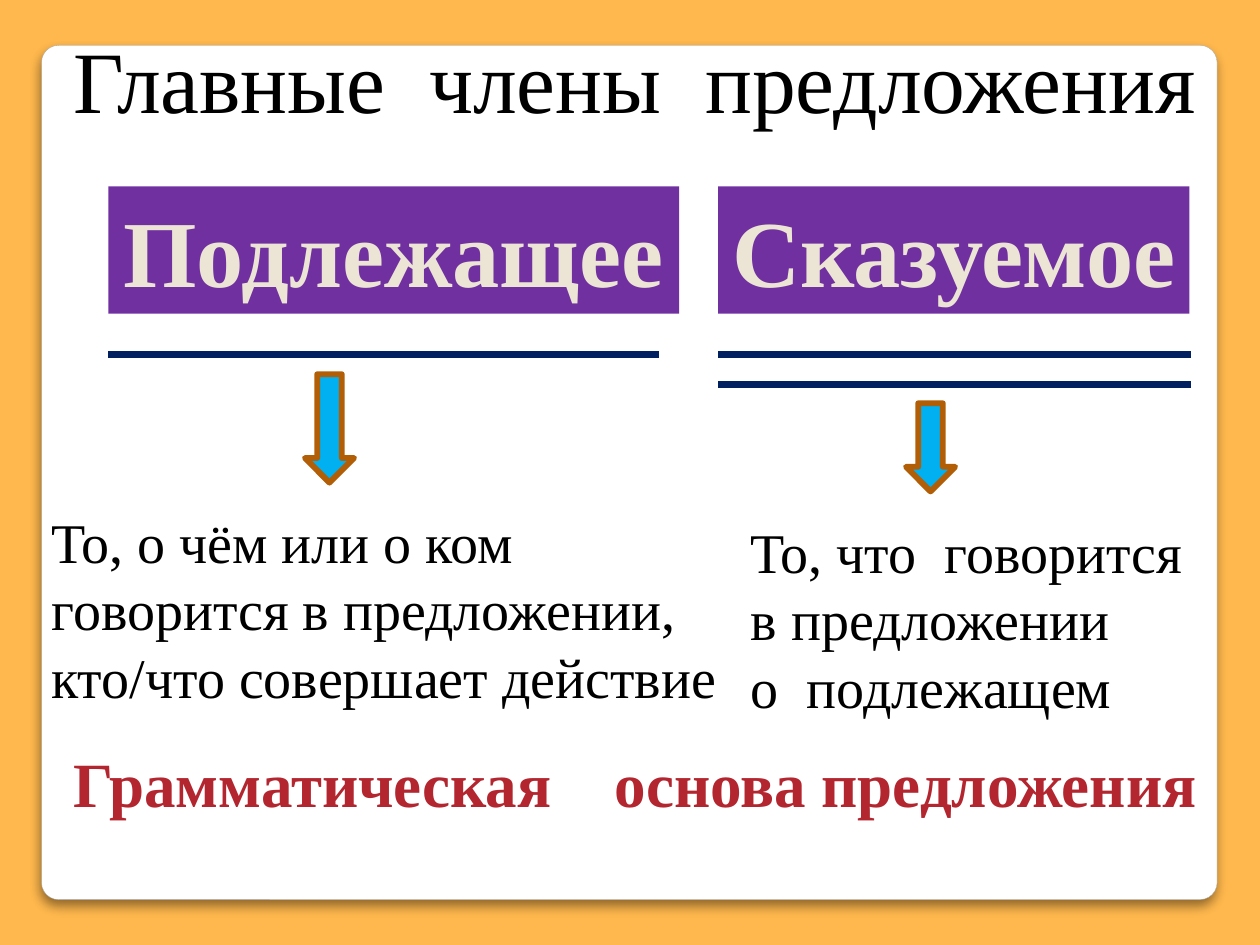
from dataclasses import dataclass

from lxml.etree import SubElement
from pptx import Presentation
from pptx.dml.color import RGBColor as RGB
from pptx.enum.shapes import MSO_CONNECTOR as CONN, MSO_SHAPE as SHAPE
from pptx.enum.text import MSO_AUTO_SIZE as FIT, PP_ALIGN as ALIGN
from pptx.oxml.ns import qn
from pptx.util import Inches, Pt


@dataclass(frozen=True)
class Theme:
    """Colours, font and type sizes of the slide."""
    font: str = "Times New Roman"
    back: str = "FFB84D"
    panel: str = "FFFFFF"
    panel_edge: str = "A4A4A4"
    term_fill: str = "7030A0"
    term_text: str = "ECE5D5"
    rule: str = "002060"
    arrow: str = "00B0F0"
    arrow_edge: str = "B25E07"
    body: str = "000000"
    accent: str = "B3262F"
    title_size: int = 50
    term_size: int = 54
    body_size: int = 32
    basis_size: int = 36


T = Theme()
WIDTH, HEIGHT = Inches(10), Inches(7.5)


def place(x, y, w, h):
    """Turn percentages of the slide's size into lengths."""
    return [int(share * full / 100) for share, full in zip((x, y, w, h), (WIDTH, HEIGHT) * 2)]


def write(sp, lines, size, color, bold=False, align=ALIGN.LEFT, wrap=True, gap=1):
    """Write lines into a shape; each underscore is a space widened by gap spaces."""
    tf = sp.text_frame
    tf.word_wrap, tf.auto_size = wrap, FIT.SHAPE_TO_FIT_TEXT
    for i, line in enumerate(lines):
        p = tf.add_paragraph() if i else tf.paragraphs[0]
        p.alignment = align
        for part in line.replace("_", "|_|").split("|"):
            r = p.add_run()
            r.text = part.replace("_", " ")
            r.font.name, r.font.size, r.font.bold = T.font, Pt(size), bold
            r.font.color.rgb = RGB.from_string(color)
            if part == "_":
                r.font._element.set("spc", str(gap * size * 25))


def add_text(s, box, lines, size, color, **style):
    """Add a text box."""
    write(s.shapes.add_textbox(*place(*box)), lines, size, color, **style)


def add_block(s, kind, box, fill, edge=None, weight=1):
    """Add a filled preset shape without a shadow."""
    sp = s.shapes.add_shape(kind, *place(*box))
    sp.shadow.inherit = False
    sp.fill.solid()
    sp.fill.fore_color.rgb = RGB.from_string(fill)
    if edge:
        sp.line.color.rgb = RGB.from_string(edge)
        sp.line.width = Pt(weight)
    else:
        sp.line.fill.background()
    return sp


def add_panel(s):
    """Add the rounded white panel with its soft shadow."""
    sp = add_block(s, SHAPE.ROUNDED_RECTANGLE, (3.3, 4.8, 93.3, 90.4), T.panel, T.panel_edge, 0.16)
    sp.adjustments[0] = 0.02
    effects = sp._element.spPr.find(qn("a:effectLst"))
    shadow = SubElement(effects, qn("a:outerShdw"), blurRad=str(Pt(6)), dist=str(Pt(4)),
                        dir="5400000", algn="t", rotWithShape="0")
    black = SubElement(shadow, qn("a:srgbClr"), val="000000")
    SubElement(black, qn("a:alpha"), val="44000")


def add_rule(s, x, y, w):
    """Add a horizontal underline."""
    left, top, width, _ = place(x, y, w, 0)
    line = s.shapes.add_connector(CONN.STRAIGHT, left, top, left + width, top)
    line.line.color.rgb = RGB.from_string(T.rule)
    line.line.width = Pt(4)
    SubElement(line._element.spPr, qn("a:effectLst"))


def add_member(s, term, x, width, rule_width, rules, arrow, note_box, note):
    """Add one sentence member: term, underlines, arrow and explanation."""
    sp = add_block(s, SHAPE.RECTANGLE, (x, 19.73, width, 13.47), T.term_fill)
    write(sp, [term], T.term_size, T.term_text, bold=True, align=ALIGN.CENTER, wrap=False)
    for i in range(rules):
        add_rule(s, x, 37.47 + 3.2 * i, rule_width)
    add_block(s, SHAPE.DOWN_ARROW, arrow, T.arrow, T.arrow_edge, 3.35)
    add_text(s, note_box, note, T.body_size, T.body, wrap=False)


def main():
    """Build and save the slide."""
    prs = Presentation()
    prs.slide_width, prs.slide_height = WIDTH, HEIGHT
    s = prs.slides.add_slide(prs.slide_layouts[6])
    s.background.fill.solid()
    s.background.fill.fore_color.rgb = RGB.from_string(T.back)
    add_panel(s)
    add_text(s, (3.1, 2.13, 94.5, 12.53), ["Главные_члены_предложения"],
             T.title_size, T.body, align=ALIGN.CENTER)
    add_member(s, "Подлежащее", 8.6, 45.3, 43.7, 1, (24.2, 39.6, 3.9, 11.47),
               (3.1, 53.07, 56.5, 22.93),
               ["То, о чём или о ком", "говорится в предложении,", "кто/что совершает действие"])
    add_member(s, "Сказуемое", 57, 37.4, 37.5, 2, (71.9, 42.67, 3.9, 9.33),
               (58.6, 54.13, 36.6, 22.93),
               ["То, что_говорится", "в предложении", "о_подлежащем"])
    add_text(s, (3.9, 78.13, 93, 9.47), ["Грамматическая_основа предложения"],
             T.basis_size, T.accent, bold=True, align=ALIGN.CENTER, gap=3)
    prs.save("out.pptx")


if __name__ == "__main__":
    main()
